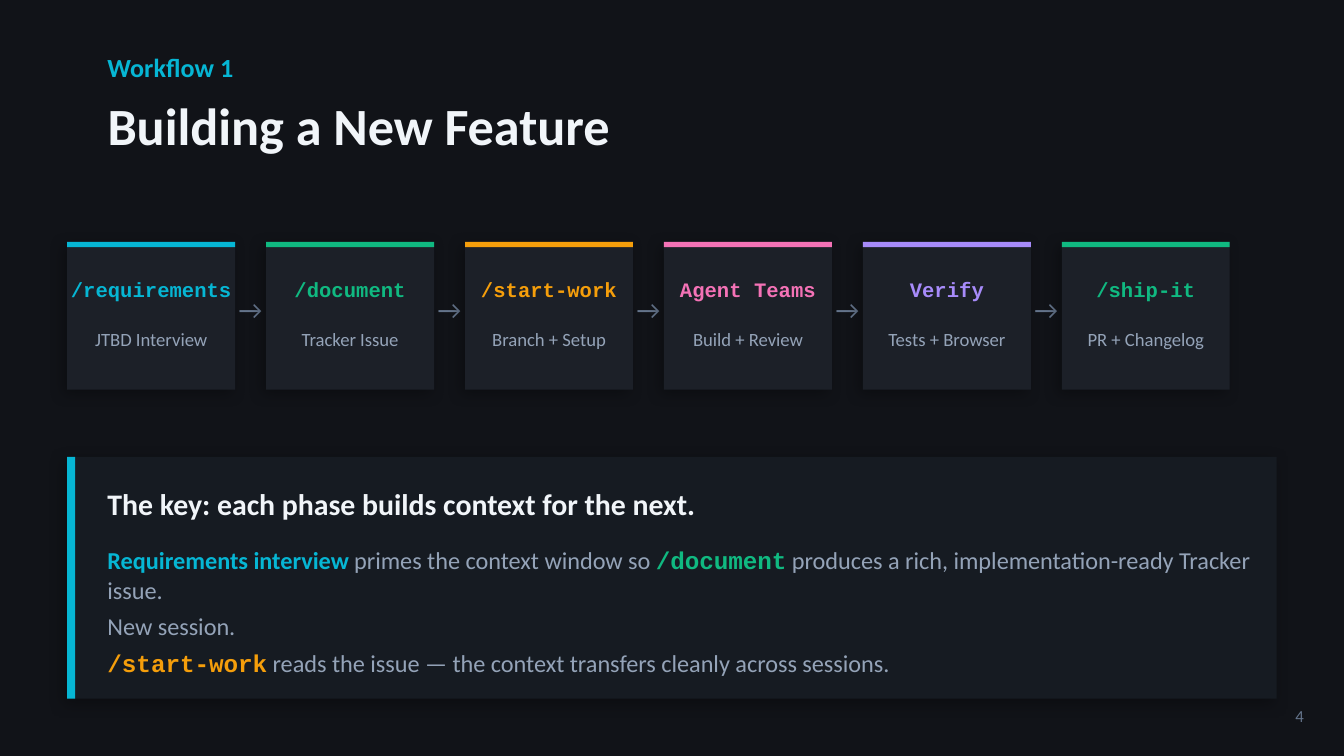
import pptx
import pptx.dml.color
import pptx.enum.shapes
import pptx.enum.text
import pptx.oxml
import pptx.util
from pptx.util import Inches

COLORS = {
    "background": "111318", "card": "1C2028", "panel": "161B22",
    "heading": "F1F5F9", "muted": "94A3B8", "faint": "64748B",
    "cyan": "06B6D4", "green": "10B981", "amber": "F59E0B",
    "pink": "F472B6", "violet": "A78BFA", "shadow": "000000",
}
SANS, MONO = "Calibri", "Courier New"
ALIGN = pptx.enum.text.PP_ALIGN

PHASES = [
    ("/requirements", "JTBD Interview", "cyan"),
    ("/document", "Tracker Issue", "green"),
    ("/start-work", "Branch + Setup", "amber"),
    ("Agent Teams", "Build + Review", "pink"),
    ("Verify", "Tests + Browser", "violet"),
    ("/ship-it", "PR + Changelog", "green"),
]
CARD_LEFT, CARD_TOP, CARD_WIDTH, CARD_HEIGHT, CARD_GAP = 0.5, 1.8, 1.25, 1.1, 0.23

# Each run: text, colour, font, bold
EXPLANATION = [
    [("Requirements interview", "cyan", SANS, True),
     (" primes the context window so ", "muted", SANS, False),
     ("/document", "green", MONO, True),
     (" produces a rich, implementation-ready Tracker issue.", "muted", SANS, False)],
    [("New session.", "muted", SANS, False)],
    [("/start-work", "amber", MONO, True),
     (" reads the issue — the context transfers cleanly across sessions.",
      "muted", SANS, False)],
]


def rgb(color):
    return pptx.dml.color.RGBColor.from_string(COLORS[color])


def style_font(font, size, color, name=SANS, bold=False):
    font.size = pptx.util.Pt(size)
    font.name = name
    font.bold = bold
    font.color.rgb = rgb(color)


def prepare_frame(shape, inset=0):
    frame = shape.text_frame
    frame.word_wrap = True
    frame.auto_size = pptx.enum.text.MSO_AUTO_SIZE.NONE
    frame.vertical_anchor = pptx.enum.text.MSO_ANCHOR.MIDDLE
    frame.margin_left = frame.margin_right = Inches(inset)
    frame.margin_top = frame.margin_bottom = Inches(inset / 2)
    return frame


def add_label(slide, box, text, size, color, name=SANS, bold=False,
              align=ALIGN.LEFT, inset=0):
    label = slide.shapes.add_textbox(*map(Inches, box))
    paragraph = prepare_frame(label, inset).paragraphs[0]
    paragraph.text = text
    paragraph.alignment = align
    style_font(paragraph.font, size, color, name, bold)


def add_block(slide, box, color, shadowed=False):
    block = slide.shapes.add_shape(
        pptx.enum.shapes.MSO_SHAPE.RECTANGLE, *map(Inches, box))
    block.shadow.inherit = False
    block.fill.solid()
    block.fill.fore_color.rgb = rgb(color)
    block.line.fill.background()
    if shadowed:
        add_soft_shadow(block)


def add_soft_shadow(block):
    """Fill the empty effect list with a 30 % outer shadow towards lower left."""
    namespace = "http://schemas.openxmlformats.org/drawingml/2006/main"
    effects = block.element.spPr.find(f"{{{namespace}}}effectLst")
    effects.append(pptx.oxml.parse_xml(
        f'<a:outerShdw xmlns:a="{namespace}" blurRad="{pptx.util.Pt(8)}" '
        f'dist="{pptx.util.Pt(3)}" dir="{135 * 60000}" algn="bl" rotWithShape="0">'
        f'<a:srgbClr val="{COLORS["shadow"]}"><a:alpha val="30000"/></a:srgbClr>'
        '</a:outerShdw>'))


def set_title(slide, box, text):
    title = slide.shapes.title
    title.left, title.top, title.width, title.height = map(Inches, box)
    paragraph = prepare_frame(title).paragraphs[0]
    paragraph.text = text
    paragraph.alignment = ALIGN.LEFT
    style_font(paragraph.font, 28, "heading", bold=True)


def add_phase(slide, left, command, detail, color):
    add_block(slide, (left, CARD_TOP, CARD_WIDTH, CARD_HEIGHT), "card", shadowed=True)
    add_block(slide, (left, CARD_TOP, CARD_WIDTH, 0.04), color)
    add_label(slide, (left, CARD_TOP + 0.15, CARD_WIDTH, 0.4), command, 11, color,
              MONO, True, ALIGN.CENTER)
    add_label(slide, (left, CARD_TOP + 0.55, CARD_WIDTH, 0.35), detail, 10, "muted",
              align=ALIGN.CENTER)


def add_workflow(slide):
    for index, phase in enumerate(PHASES):
        left = CARD_LEFT + index * (CARD_WIDTH + CARD_GAP)
        if index:
            add_label(slide, (left - CARD_GAP, CARD_TOP + 0.25, CARD_GAP, 0.5), "→",
                      14, "faint", align=ALIGN.CENTER)
        add_phase(slide, left, *phase)


def add_explanation(slide, box):
    frame = prepare_frame(slide.shapes.add_textbox(*map(Inches, box)))
    for index, pieces in enumerate(EXPLANATION):
        paragraph = frame.add_paragraph() if index else frame.paragraphs[0]
        paragraph.space_after = pptx.util.Pt(4)
        for text, color, name, bold in pieces:
            run = paragraph.add_run()
            run.text = text
            style_font(run.font, 13, color, name, bold)


def add_key_panel(slide):
    add_block(slide, (0.5, 3.4, 9, 1.8), "panel", shadowed=True)
    add_block(slide, (0.5, 3.4, 0.06, 1.8), "cyan")
    add_label(slide, (0.8, 3.55, 8.5, 0.4),
              "The key: each phase builds context for the next.", 16, "heading", bold=True)
    add_explanation(slide, (0.8, 4.05, 8.5, 1))


def main():
    presentation = pptx.Presentation()
    presentation.slide_width = Inches(10)
    presentation.slide_height = Inches(10) * 9 // 16
    slide = presentation.slides.add_slide(
        presentation.slide_layouts.get_by_name("Title Only"))
    slide.background.fill.solid()
    slide.background.fill.fore_color.rgb = rgb("background")

    add_label(slide, (9.3, 5.15, 0.5, 0.35), "4", 9, "faint",
              align=ALIGN.RIGHT, inset=0.1)
    add_label(slide, (0.8, 0.3, 3, 0.4), "Workflow 1", 14, "cyan", bold=True)
    set_title(slide, (0.8, 0.65, 8, 0.55), "Building a New Feature")
    add_workflow(slide)
    add_key_panel(slide)
    presentation.save("out.pptx")


if __name__ == "__main__":
    main()
